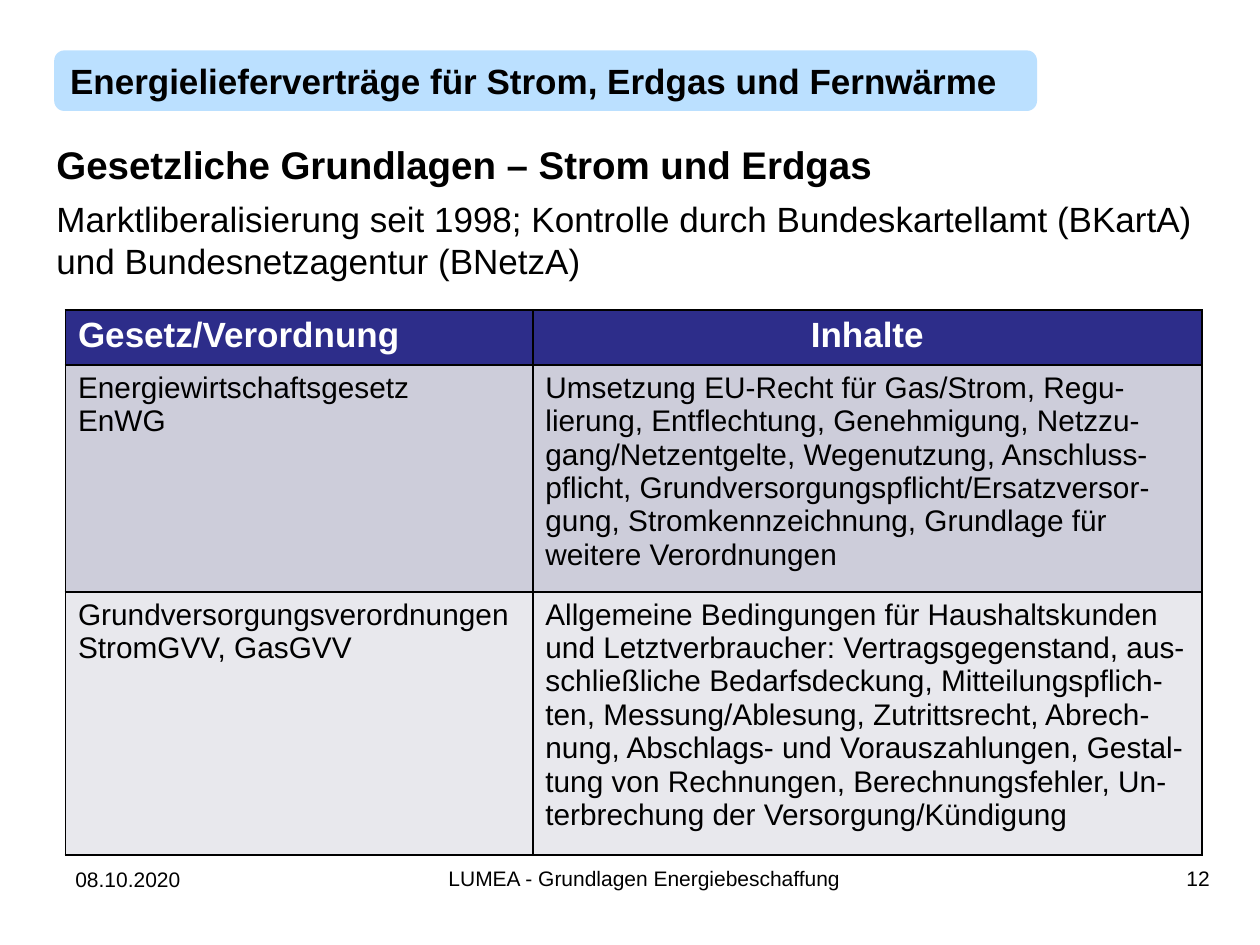
import pptx
import pptx.util
import pptx.dml.color
import pptx.enum.shapes
import pptx.enum.text
import pptx.oxml.ns
from lxml import etree

Pt = pptx.util.Pt
Align = pptx.enum.text.PP_ALIGN
Anchor = pptx.enum.text.MSO_ANCHOR

# Content
TITLE = "Energielieferverträge für Strom, Erdgas und Fernwärme"
HEAD = "Gesetzliche Grundlagen – Strom und Erdgas"
INTRO = ("Marktliberalisierung seit 1998; Kontrolle durch Bundeskartellamt "
         "(BKartA) und Bundesnetzagentur (BNetzA)")
LAWS = [
    (["Gesetz/Verordnung"], ["Inhalte"]),
    (["Energiewirtschaftsgesetz", "EnWG"],
     ["Umsetzung EU-Recht für Gas/Strom, Regu-lierung, Entflechtung, "
      "Genehmigung, Netzzu-gang/Netzentgelte, Wegenutzung, "
      "Anschluss-pflicht, Grundversorgungspflicht/Ersatzversor-gung, "
      "Stromkennzeichnung, Grundlage für weitere Verordnungen"]),
    (["Grundversorgungsverordnungen StromGVV, GasGVV"],
     ["Allgemeine Bedingungen für Haushaltskunden und Letztverbraucher: "
      "Vertragsgegenstand, aus-schließliche Bedarfsdeckung, "
      "Mitteilungspflich-ten, Messung/Ablesung, Zutrittsrecht, "
      "Abrech-nung, Abschlags- und Vorauszahlungen, Gestal-tung von "
      "Rechnungen, Berechnungsfehler, Un-terbrechung der "
      "Versorgung/Kündigung"]),
]
COLS = [267.1, 382.3]
ROWS = [31.4, 129.7, 150.3]
FILLS = ["2D2D8A", "CDCDDA", "E8E8ED"]
# text, left, top, width, alignment
FOOT = [
    ("LUMEA - Grundlagen Energiebeschaffung", 127.4, 491, 481.7, Align.CENTER),
    ("08.10.2020", 36, 491.8, 74.2, Align.LEFT),
    ("12", 637.9, 491, 60.5, Align.RIGHT),
]
BAR = [Pt(v) for v in (31, 28.8, 561.6, 34.6)]


def color(code):
    return pptx.dml.color.RGBColor.from_string(code)


def write(para, text, size, bold=False, ink="000000", align=Align.LEFT):
    para.alignment = align
    run = para.add_run()
    run.text = text
    font = run.font
    font.name, font.size, font.bold = "Arial", Pt(size), bold
    font.color.rgb = color(ink)


def add_box(left, top, width, height):
    box = slide.shapes.add_textbox(Pt(left), Pt(top), Pt(width), Pt(height))
    box.text_frame.word_wrap = True
    return box.text_frame


def add_tag(parent, name, **attrs):
    return etree.SubElement(parent, pptx.oxml.ns.qn("a:" + name), **attrs)


def add_edges(cell):
    props = cell._tc.get_or_add_tcPr()
    for pos, side in enumerate(("lnL", "lnR", "lnT", "lnB")):
        line = add_tag(props, side, w=str(Pt(1)))
        add_tag(add_tag(line, "solidFill"), "srgbClr", val="000000")
        props.insert(pos, line)


deck = pptx.Presentation()
deck.slide_width, deck.slide_height = Pt(720), Pt(540)
slide = deck.slides.add_slide(deck.slide_layouts[5])

# Title on a pale bar
bar = slide.shapes.add_shape(
    pptx.enum.shapes.MSO_SHAPE.ROUNDED_RECTANGLE, *BAR)
bar.shadow.inherit = False
bar.fill.solid()
bar.fill.fore_color.rgb = color("058EFF")
tint = bar._element.spPr.find(".//" + pptx.oxml.ns.qn("a:srgbClr"))
add_tag(tint, "alpha", val="27000")
bar.line.fill.background()

title = slide.shapes.title
title.left, title.top, title.width, title.height = BAR
slide.shapes._spTree.append(title._element)
frame = title.text_frame
frame.word_wrap = True
frame.vertical_anchor = Anchor.MIDDLE
frame.margin_left = Pt(9)
write(frame.paragraphs[0], TITLE, 20, True)

# Heading and introduction
frame = add_box(25.2, 77, 672.5, 88.6)
write(frame.paragraphs[0], HEAD, 22, True)
frame.paragraphs[0].space_after = Pt(6)
write(frame.add_paragraph(), INTRO, 20)

# Table of laws
grid = slide.shapes.add_table(
    len(ROWS), len(COLS), Pt(37.4), Pt(177.1),
    Pt(sum(COLS)), Pt(sum(ROWS))).table
for col, width in zip(grid.columns, COLS):
    col.width = Pt(width)
for r, (law, high, fill) in enumerate(zip(LAWS, ROWS, FILLS)):
    grid.rows[r].height = Pt(high)
    for c, lines in enumerate(law):
        cell = grid.cell(r, c)
        cell.fill.solid()
        cell.fill.fore_color.rgb = color(fill)
        add_edges(cell)
        frame = cell.text_frame
        for i, line in enumerate(lines):
            para = frame.add_paragraph() if i else frame.paragraphs[0]
            if r == 0:
                align = Align.CENTER if c else Align.LEFT
                write(para, line, 20, True, "FFFFFF", align)
            else:
                write(para, line, 17)

# Footer
for text, left, top, width, align in FOOT:
    frame = add_box(left, top, width, 37.4)
    write(frame.paragraphs[0], text, 12, align=align)

deck.save("out.pptx")
